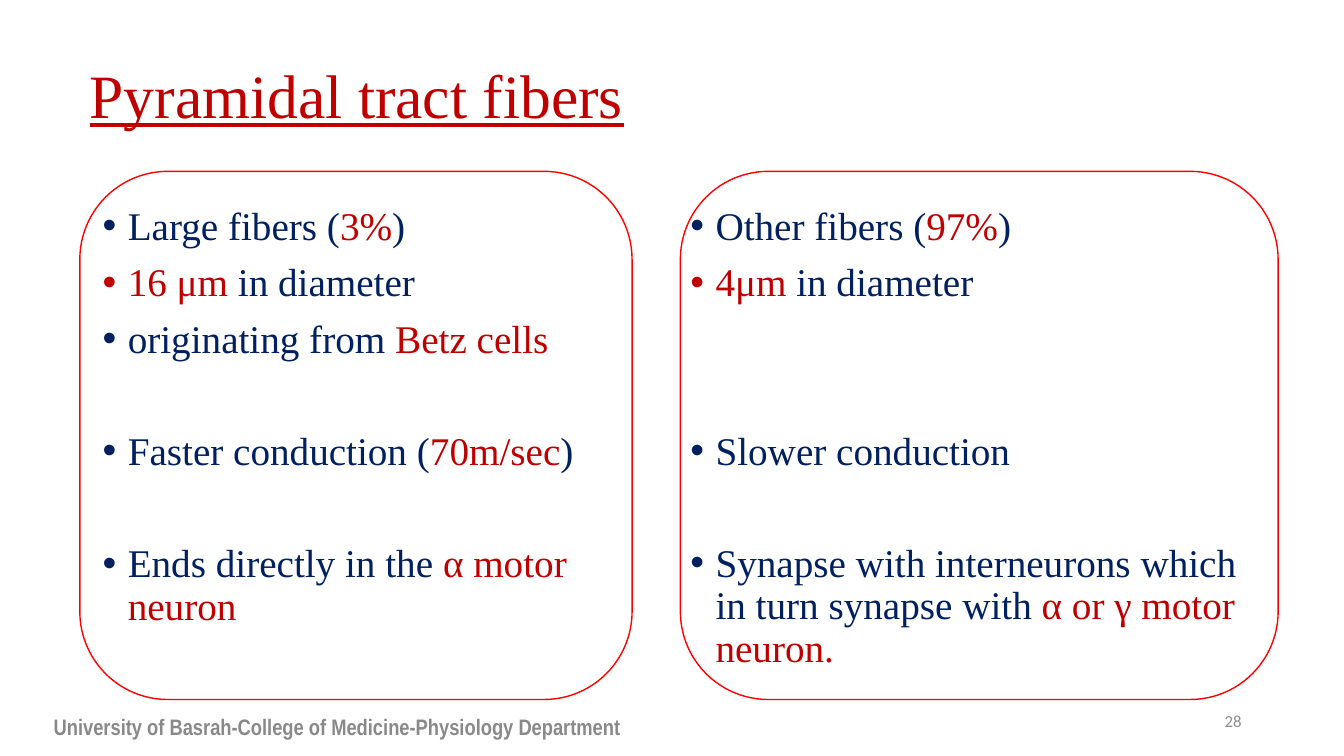
from collections import namedtuple

from lxml.etree import SubElement
from pptx import Presentation
from pptx.dml.color import RGBColor
from pptx.enum.shapes import MSO_SHAPE as Shape
from pptx.enum.text import MSO_ANCHOR as Anchor, PP_ALIGN as Align
from pptx.oxml.ns import qn
from pptx.util import Pt

RED = RGBColor(0xC0, 0x00, 0x00)
NAVY = RGBColor(0x00, 0x20, 0x60)
OUTLINE_RED = RGBColor(0xFF, 0x00, 0x00)
FOOTER_GRAY = RGBColor(0x89, 0x89, 0x89)
NUMBER_GRAY = RGBColor(0x8C, 0x8C, 0x8C)

Box = namedtuple("Box", "left top width height")

SERIF = "Times New Roman"
TITLE_FORMAT = {"size": Pt(44), "name": SERIF, "underline": True}
BODY_FORMAT = {"size": Pt(28), "name": SERIF}
FOOTER_FORMAT = {"size": Pt(16), "name": "Arial Narrow", "bold": True}
NUMBER_FORMAT = {"size": Pt(12), "name": "Calibri"}

GAP = 10
ROW = 40
LARGE_FIBERS = [
    (0, [("Large fibers (", NAVY), ("3%", RED), (")", NAVY)]),
    (GAP, [("16 μm", RED), (" in diameter", NAVY)]),
    (GAP, [("originating from ", NAVY), ("Betz cells", RED)]),
    (GAP + ROW, [("Faster conduction (", NAVY), ("70m/sec", RED), (")", NAVY)]),
    (GAP + ROW, [("Ends directly in the ", NAVY), ("α motor neuron", RED)]),
]
OTHER_FIBERS = [
    (0, [("Other fibers (", NAVY), ("97%", RED), (")", NAVY)]),
    (GAP, [("4μm", RED), (" in diameter", NAVY)]),
    (GAP + 2 * ROW, [("Slower conduction", NAVY)]),
    (GAP + ROW, [("Synapse with interneurons which in turn synapse with ", NAVY),
                 ("α or γ motor neuron.", RED)]),
]


def add_frame(slide, box, anchor):
    """Add a wrapping text box and return its text frame."""
    frame = slide.shapes.add_textbox(*map(Pt, box)).text_frame
    frame.word_wrap = True
    frame.vertical_anchor = anchor
    return frame


def add_span(para, text, color, font_format):
    """Append one formatted run to a paragraph."""
    span = para.add_run()
    span.text = text
    for name, value in font_format.items():
        setattr(span.font, name, value)
    span.font.color.rgb = color


def add_bullet(para):
    """Give a paragraph a hanging round bullet."""
    props = para._p.get_or_add_pPr()
    props.set("marL", str(Pt(18)))
    props.set("indent", str(-Pt(18)))
    SubElement(props, qn("a:buFont")).set("typeface", "Arial")
    SubElement(props, qn("a:buChar")).set("char", "•")


def add_line(slide, box, text, color, font_format, align):
    """Add a single line of text centred vertically in its box."""
    para = add_frame(slide, box, Anchor.MIDDLE).paragraphs[0]
    para.alignment = align
    para.line_spacing = 0.9 if font_format is TITLE_FORMAT else 1.0
    add_span(para, text, color, font_format)


def add_fiber_panel(slide, box, text_inset, bullets):
    """Add a bulleted list inside a rounded outline."""
    text_box = Box(box.left + text_inset, box.top + 21.6, 408, box.height - 21.6)
    frame = add_frame(slide, text_box, Anchor.TOP)
    for index, (space, spans) in enumerate(bullets):
        para = frame.add_paragraph() if index else frame.paragraphs[0]
        para.line_spacing = 0.9
        para.space_before = Pt(space)
        add_bullet(para)
        for text, color in spans:
            add_span(para, text, color, BODY_FORMAT)
    outline = slide.shapes.add_shape(Shape.ROUNDED_RECTANGLE, *map(Pt, box))
    outline.shadow.inherit = False
    outline.fill.background()
    outline.line.color.rgb = OUTLINE_RED
    outline.line.width = Pt(1)


def main():
    """Build and save the slide."""
    deck = Presentation()
    deck.slide_width, deck.slide_height = Pt(960), Pt(540)
    slide = deck.slides.add_slide(deck.slide_layouts[6])
    add_line(slide, Box(57, 18, 828, 104.4), "Pyramidal tract fibers",
             RED, TITLE_FORMAT, Align.LEFT)
    add_fiber_panel(slide, Box(57, 122.4, 394.5, 377.3), 9.2, LARGE_FIBERS)
    add_fiber_panel(slide, Box(486, 122.4, 427, 377.3), 0, OTHER_FIBERS)
    add_line(slide, Box(18, 504.7, 445.7, 28.8),
             "University of Basrah-College of Medicine-Physiology Department",
             FOOTER_GRAY, FOOTER_FORMAT, Align.CENTER)
    add_line(slide, Box(678, 500.4, 216, 28.8), "28",
             NUMBER_GRAY, NUMBER_FORMAT, Align.RIGHT)
    deck.save("out.pptx")


if __name__ == "__main__":
    main()
